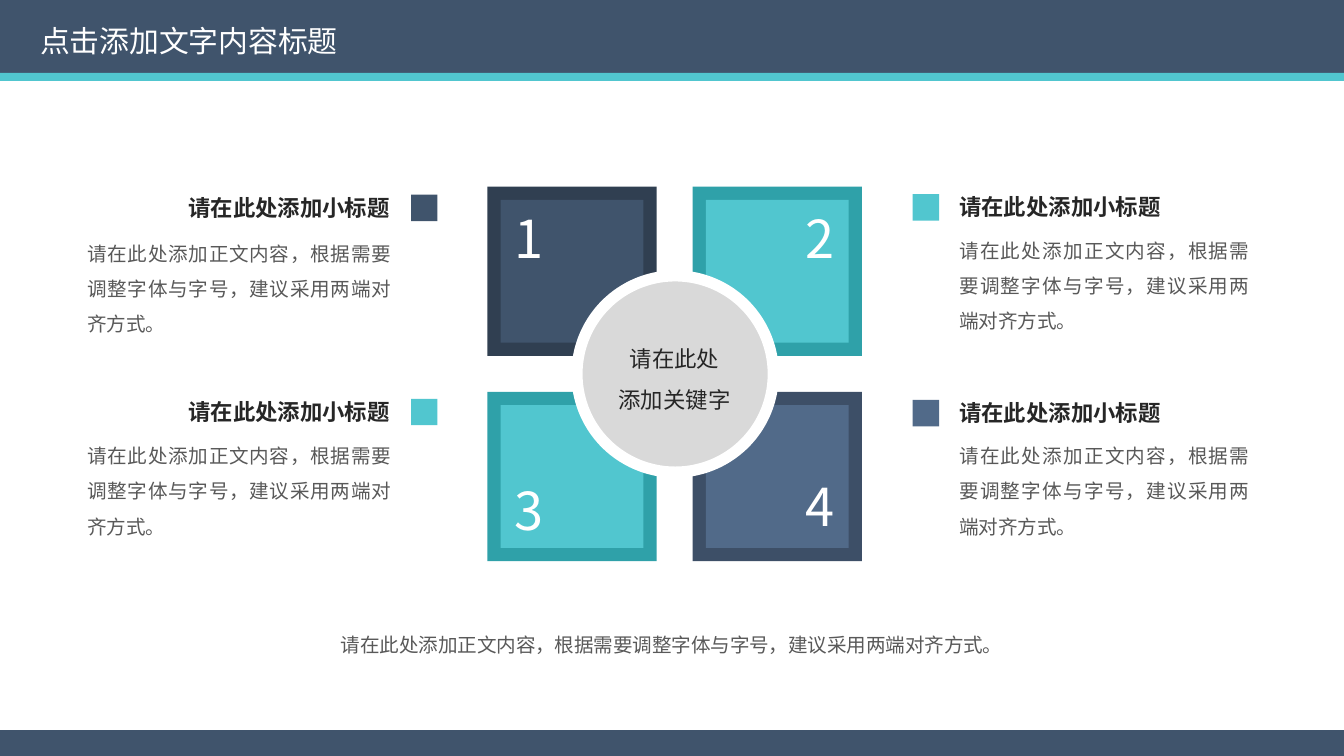
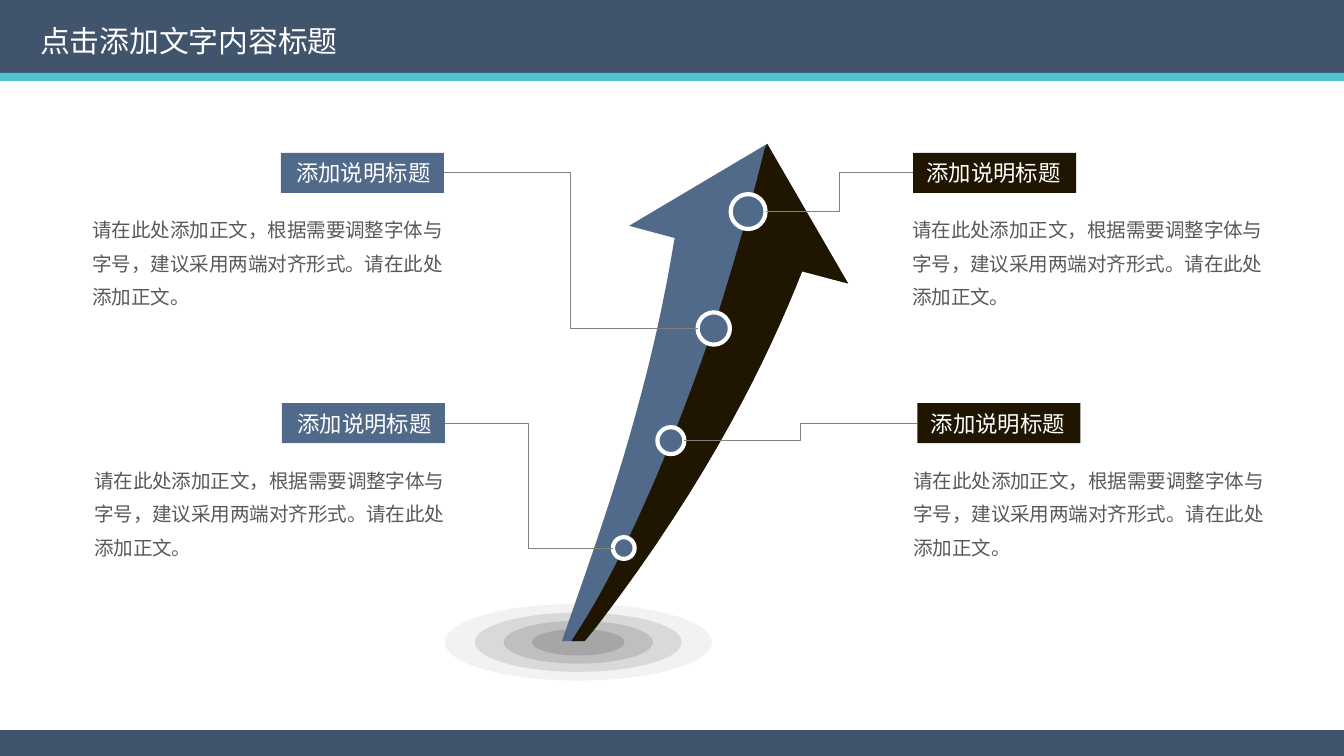
from dataclasses import dataclass

from lxml import etree
from pptx import Presentation
from pptx import util as u
from pptx.dml.color import RGBColor
from pptx.enum import shapes, text
from pptx.oxml import ns

FONT = "Noto Sans CJK SC"
COLORS = {
    "navy": "40546C",
    "navy_dark": "303F51",
    "teal": "51C6CF",
    "teal_dark": "2FA1A9",
    "steel": "516A89",
    "steel_dark": "3D4F67",
    "brown": "201500",
    "white": "FFFFFF",
    "ink": "262626",
    "body": "595959",
    "link": "808080",
    "ripple_1": "F2F2F2",
    "ripple_2": "D9D9D9",
    "ripple_3": "BFBFBF",
    "ripple_4": "A6A6A6",
}
ALIGN = text.PP_ALIGN
RECT = shapes.MSO_SHAPE.RECTANGLE
OVAL = shapes.MSO_SHAPE.OVAL
WIDTH, HEIGHT = 25.4, 14.29
TITLE = "点击添加文字内容标题"
Point = tuple[float, float]


@dataclass(frozen=True)
class TextStyle:
    size: float
    color: str
    align: ALIGN = ALIGN.LEFT
    bold: bool = False
    spacing: float | u.Length | None = None
    after: u.Length | None = None


@dataclass(frozen=True)
class Tile:
    number: str
    column: int
    row: int
    number_top: float
    border: str
    fill: str


@dataclass(frozen=True)
class Column:
    marker_left: float
    heading_left: float
    heading_width: float
    body_left: float
    body_width: float
    align: ALIGN


@dataclass(frozen=True)
class Note:
    column: Column
    top: float
    body_top: float
    color: str


@dataclass(frozen=True)
class Callout:
    label_left: float
    label_top: float
    body_left: float
    on_left: bool
    dot: Point
    diameter: float


TITLE_STYLE = TextStyle(16, "white")
NUMBER_STYLE = TextStyle(28, "white", ALIGN.CENTER)
KEYWORD_STYLE = TextStyle(12, "ink", ALIGN.CENTER, spacing=1.5)
NOTE_STYLE = TextStyle(10.5, "body", ALIGN.JUSTIFY, spacing=1.5)
SUMMARY_STYLE = TextStyle(10.5, "body", ALIGN.CENTER)
CALLOUT_STYLE = TextStyle(10.5, "body", spacing=u.Pt(18), after=u.Pt(6))

TILE_LEFT, TILE_TOP, TILE_SIZE, TILE_STEP, TILE_INSET = 9.21, 3.53, 3.2, 3.88, 0.25
NUMBER_WIDTH, NUMBER_HEIGHT = 1.09, 1.45
TILES = [
    Tile("1", 0, 0, 3.78, "navy_dark", "navy"),
    Tile("2", 1, 0, 3.78, "teal_dark", "teal"),
    Tile("3", 0, 1, 8.92, "teal_dark", "teal"),
    Tile("4", 1, 1, 8.84, "steel_dark", "steel"),
]

LEFT_COLUMN = Column(7.77, 2.51, 5.11, 1.4, 6.25, ALIGN.RIGHT)
RIGHT_COLUMN = Column(17.25, 17.88, 5.59, 17.88, 5.99, ALIGN.LEFT)
NOTES = [
    Note(RIGHT_COLUMN, 3.53, 4.17, "teal"),
    Note(RIGHT_COLUMN, 7.42, 8.05, "steel"),
    Note(LEFT_COLUMN, 3.54, 4.22, "navy"),
    Note(LEFT_COLUMN, 7.4, 8.05, "teal"),
]
NOTE_HEADING = "请在此处添加小标题"
NOTE_BODY = "请在此处添加正文内容，根据需要调整字体与字号，建议采用两端对齐方式。"

LABEL_WIDTH, LABEL_HEIGHT = 3.08, 0.76
CALLOUT_LABEL = "添加说明标题"
CALLOUT_BODY = "请在此处添加正文，根据需要调整字体与字号，建议采用两端对齐形式。请在此处添加正文。"
CALLOUTS = [
    Callout(5.31, 2.89, 1.75, True, (13.49, 6.21), 0.61),
    Callout(5.33, 7.62, 1.78, True, (11.79, 10.36), 0.41),
    Callout(17.26, 2.89, 17.24, False, (14.14, 4.0), 0.66),
    Callout(17.34, 7.62, 17.26, False, (12.68, 8.33), 0.51),
]
RIPPLE_CENTER = (10.93, 12.14)
RIPPLES = [
    ("ripple_1", 5.05, 1.45),
    ("ripple_2", 3.91, 1.12),
    ("ripple_3", 2.82, 0.81),
    ("ripple_4", 1.75, 0.5),
]


def rgb(name: str) -> RGBColor:
    return RGBColor.from_string(COLORS[name])


def paint(shape, fill: str, line: str | None = None, line_width: float = 0):
    shape.shadow.inherit = False
    shape.fill.solid()
    shape.fill.fore_color.rgb = rgb(fill)
    if line:
        shape.line.color.rgb = rgb(line)
        shape.line.width = u.Pt(line_width)
    else:
        shape.line.fill.background()


def add_block(page, kind, left: float, top: float, width: float, height: float,
              fill: str, line: str | None = None, line_width: float = 0):
    block = page.shapes.add_shape(kind, u.Cm(left), u.Cm(top), u.Cm(width), u.Cm(height))
    paint(block, fill, line, line_width)
    return block


def add_disc(page, center: Point, width: float, height: float, fill: str,
             line: str | None = None, line_width: float = 0):
    x, y = center
    add_block(page, OVAL, x - width / 2, y - height / 2, width, height, fill, line, line_width)


def write(frame, lines: list[str], style: TextStyle, wrap: bool = True):
    frame.word_wrap = wrap
    frame.auto_size = text.MSO_AUTO_SIZE.SHAPE_TO_FIT_TEXT
    for index, line in enumerate(lines):
        para = frame.add_paragraph() if index else frame.paragraphs[0]
        para.add_run().text = line
        para.alignment = style.align
        para.line_spacing = style.spacing
        para.space_after = style.after
        para.font.size = u.Pt(style.size)
        para.font.bold = style.bold
        para.font.color.rgb = rgb(style.color)
        para.font.name = FONT
        defaults = para._p.pPr.find(ns.qn("a:defRPr"))
        etree.SubElement(defaults, ns.qn("a:ea")).set("typeface", FONT)


def add_text(page, left: float, top: float, width: float, height: float,
             lines: list[str], style: TextStyle, wrap: bool = True):
    box = page.shapes.add_textbox(u.Cm(left), u.Cm(top), u.Cm(width), u.Cm(height))
    write(box.text_frame, lines, style, wrap)
    return box


def add_page(deck):
    page = deck.slides.add_slide(deck.slide_layouts[6])
    for top, height, color in ((0, 1.38, "navy"), (1.38, 0.15, "teal"), (13.8, 0.49, "navy")):
        add_block(page, RECT, 0, top, WIDTH, height, color)
    add_text(page, 0.51, 0.3, 6.22, 0.94, [TITLE], TITLE_STYLE, wrap=False)
    return page


def draw_tile(page, tile: Tile):
    left = TILE_LEFT + tile.column * TILE_STEP
    top = TILE_TOP + tile.row * TILE_STEP
    inner = TILE_SIZE - 2 * TILE_INSET
    add_block(page, RECT, left, top, TILE_SIZE, TILE_SIZE, tile.border)
    add_block(page, RECT, left + TILE_INSET, top + TILE_INSET, inner, inner, tile.fill)
    number_left = left + TILE_INSET + tile.column * (inner - NUMBER_WIDTH)
    add_text(page, number_left, tile.number_top, NUMBER_WIDTH, NUMBER_HEIGHT,
             [tile.number], NUMBER_STYLE, wrap=False)


def draw_note(page, note: Note):
    column = note.column
    heading = TextStyle(12, "ink", column.align, bold=True)
    add_block(page, RECT, column.marker_left, note.top + 0.14, 0.5, 0.5, note.color)
    add_text(page, column.heading_left, note.top, column.heading_width, 0.76,
             [NOTE_HEADING], heading)
    add_text(page, column.body_left, note.body_top, column.body_width, 2.29,
             [NOTE_BODY], NOTE_STYLE)


def draw_callout(page, callout: Callout):
    body = add_text(page, callout.body_left, callout.label_top + 0.92, 6.96, 2.18,
                    [CALLOUT_BODY], CALLOUT_STYLE)
    body.text_frame.margin_left = body.text_frame.margin_right = 0
    label = add_block(page, RECT, callout.label_left, callout.label_top, LABEL_WIDTH,
                      LABEL_HEIGHT, "steel" if callout.on_left else "brown")
    align = ALIGN.RIGHT if callout.on_left else ALIGN.LEFT
    write(label.text_frame, [CALLOUT_LABEL], TextStyle(12, "white", align), wrap=False)


def draw_link(page, callout: Callout):
    x, y = callout.dot
    radius = callout.diameter / 2
    start_x = callout.label_left + (LABEL_WIDTH if callout.on_left else 0)
    end_x = x - radius if callout.on_left else x + radius
    link = page.shapes.add_connector(
        shapes.MSO_CONNECTOR.ELBOW, u.Cm(start_x),
        u.Cm(callout.label_top + LABEL_HEIGHT / 2), u.Cm(end_x), u.Cm(y))
    link.line.color.rgb = rgb("link")
    link.line.width = u.Pt(0.5)
    etree.SubElement(link.element.spPr, ns.qn("a:effectLst"))


def curve(start: Point, first: Point, second: Point, end: Point, steps: int = 16) -> list[Point]:
    points = []
    for step in range(steps + 1):
        t = step / steps
        weights = ((1 - t) ** 3, 3 * t * (1 - t) ** 2, 3 * t * t * (1 - t), t ** 3)
        anchors = (start, first, second, end)
        points.append((sum(w * a[0] for w, a in zip(weights, anchors)),
                       sum(w * a[1] for w, a in zip(weights, anchors))))
    return points


def add_outline(page, points: list[Point], fill: str):
    corners = [(u.Cm(x), u.Cm(y)) for x, y in points]
    builder = page.shapes.build_freeform(*corners[0])
    builder.add_line_segments(corners[1:], close=True)
    paint(builder.convert_to_shape(), fill)


def draw_arrow(page):
    right_edge = [
        (14.5, 2.72), (16.03, 5.36),
        *curve((15.16, 5.13), (14.53, 6.73), (13.44, 9.02), (11.28, 11.84)),
        (11.05, 12.12),
    ]
    left_edge = [
        (10.62, 12.12),
        *curve((11.02, 10.97), (11.73, 8.94), (12.37, 6.86), (12.75, 4.5)),
        (11.89, 4.27),
    ]
    spine = [
        (10.8, 12.12),
        *curve((10.85, 12.04), (11.68, 10.8), (12.7, 8.53), (13.59, 5.87)),
        *curve((13.59, 5.87), (13.92, 4.8), (14.22, 3.78), (14.45, 2.82)),
    ]
    add_outline(page, right_edge + left_edge, "steel")
    add_outline(page, right_edge + spine, "brown")


def build_tiles_page(deck):
    page = add_page(deck)
    for tile in TILES:
        draw_tile(page, tile)
    add_disc(page, (12.76, 7.07), 3.71, 3.71, "ripple_2", "white", 6)
    add_text(page, 11.43, 6.15, 2.64, 1.8, ["请在此处", "添加关键字"], KEYWORD_STYLE, wrap=False)
    for note in NOTES:
        draw_note(page, note)
    add_text(page, 4.83, 11.84, 15.75, 0.71, [NOTE_BODY], SUMMARY_STYLE)


def build_arrow_page(deck):
    page = add_page(deck)
    for callout in CALLOUTS:
        draw_callout(page, callout)
    for color, width, height in RIPPLES:
        add_disc(page, RIPPLE_CENTER, width, height, color)
    draw_arrow(page)
    for callout in CALLOUTS:
        add_disc(page, callout.dot, callout.diameter, callout.diameter, "steel", "white", 2.25)
        draw_link(page, callout)


def main():
    deck = Presentation()
    deck.slide_width, deck.slide_height = u.Cm(WIDTH), u.Cm(HEIGHT)
    build_tiles_page(deck)
    build_arrow_page(deck)
    deck.save("out.pptx")


if __name__ == "__main__":
    main()
